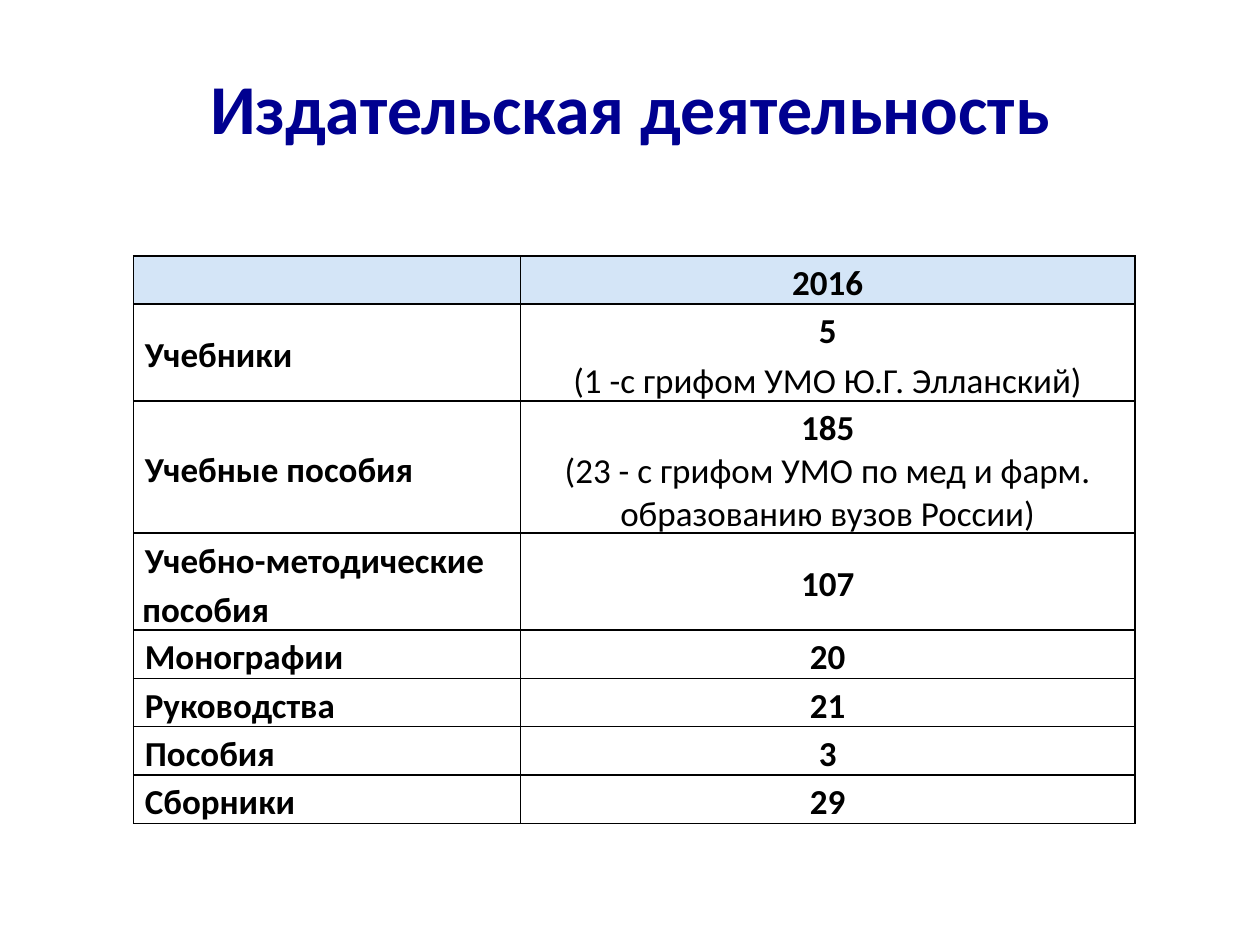
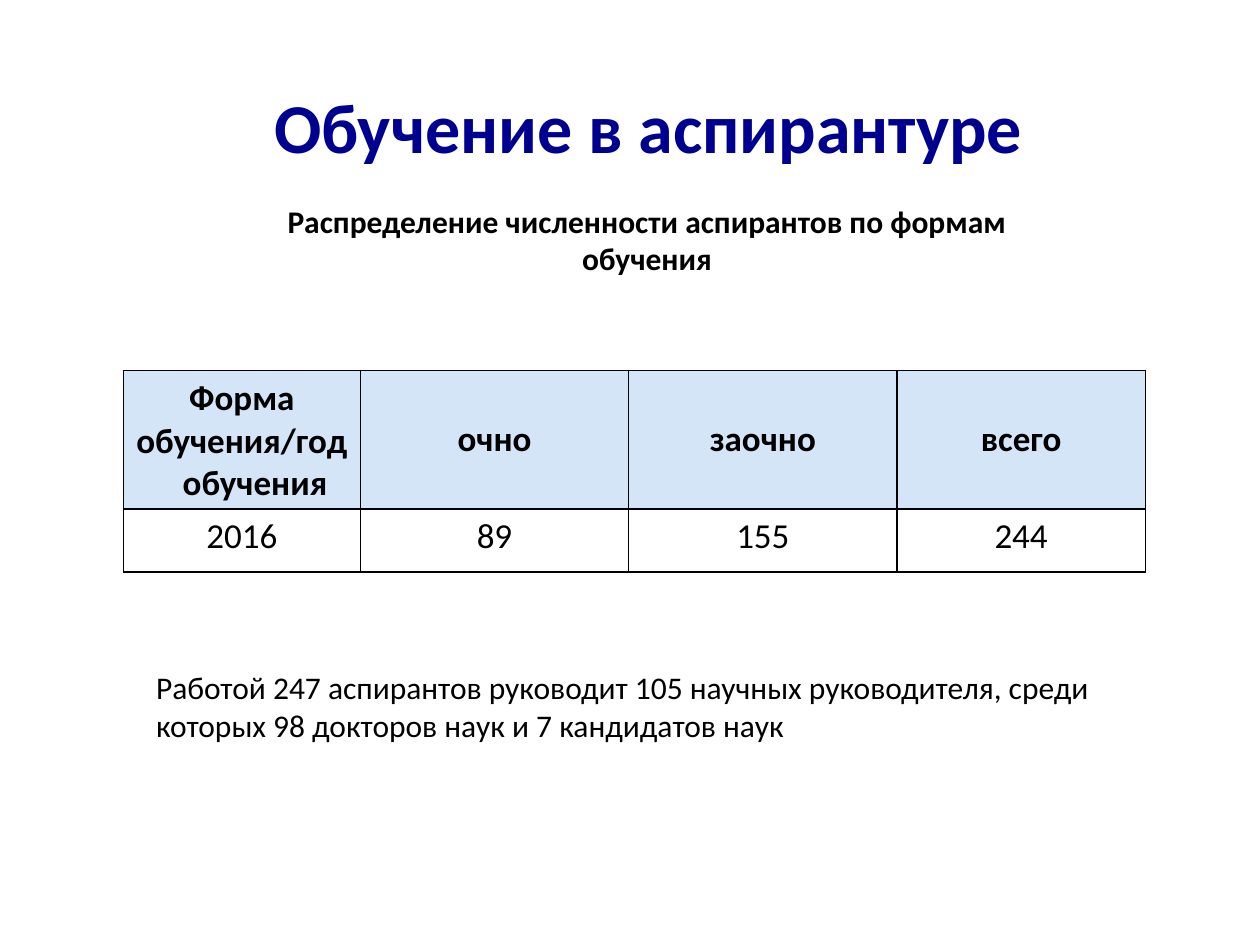
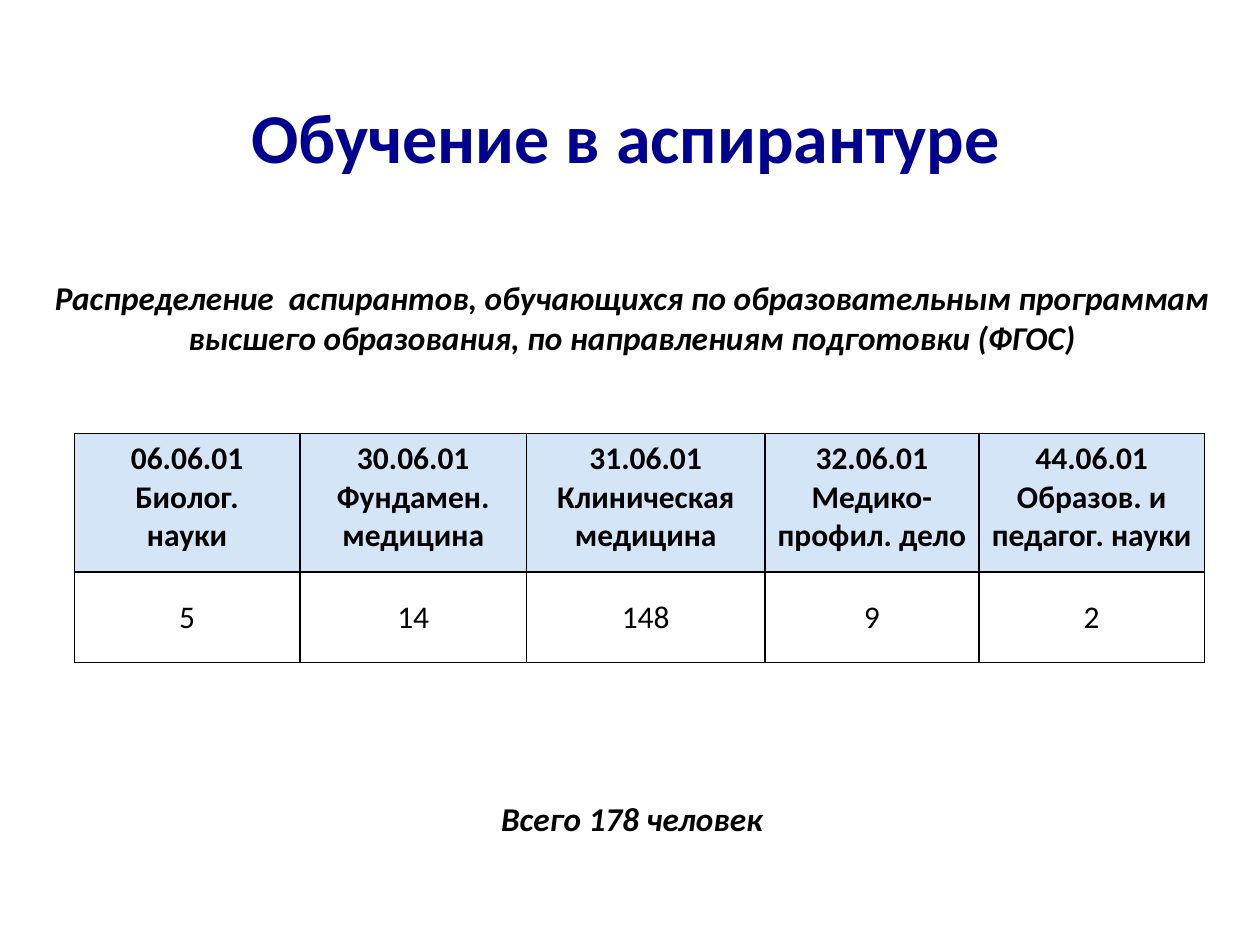
"""Build three slides on publishing and postgraduate training."""
from dataclasses import dataclass
from typing import Sequence

from lxml import etree
from pptx import Presentation, util as u
from pptx.dml.color import RGBColor
from pptx.enum import text as t
from pptx.oxml import ns

NAVY = RGBColor(0x00, 0x00, 0x90)
BLACK = RGBColor(0x00, 0x00, 0x00)
PALE_BLUE = RGBColor(0xD4, 0xE5, 0xF7)
FONT = "Calibri"
SLIDE_W, SLIDE_H = u.Inches(10), u.Inches(7.5)
GRID_COLS, GRID_ROWS = 100, 75
MIDDLE, TOP = t.MSO_ANCHOR.MIDDLE, t.MSO_ANCHOR.TOP


@dataclass(frozen=True)
class Box:
    """Place on the slide grid, in columns and rows."""
    col: float
    row: float
    cols: float
    rows: float


@dataclass(frozen=True)
class Line:
    """One paragraph; indents are in grid columns."""
    text: str
    bold: bool = True
    italic: bool = False
    centred: bool = True
    spacing: float = 1.0
    left: float = 0
    first: float = 0


@dataclass(frozen=True)
class Cell:
    """Contents of one table cell."""
    lines: Sequence[Line]
    header: bool = False
    anchor: t.MSO_ANCHOR = MIDDLE


@dataclass(frozen=True)
class Grid:
    """A table: its corner, column widths, row heights, cells and style."""
    col: float
    row: float
    widths: Sequence[float]
    heights: Sequence[float]
    cells: Sequence[Sequence[Cell]]
    size: int
    side_margin: float = 1
    end_margin: float = 0.5


def across(cols: float) -> int:
    """Turn grid columns into a length."""
    return round(SLIDE_W * cols / GRID_COLS)


def down(rows: float) -> int:
    """Turn grid rows into a length."""
    return round(SLIDE_H * rows / GRID_ROWS)


def write(frame, lines: Sequence[Line], size: float, color: RGBColor = BLACK) -> None:
    """Fill a text frame with formatted paragraphs."""
    for number, line in enumerate(lines):
        paragraph = frame.add_paragraph() if number else frame.paragraphs[0]
        paragraph.text = line.text
        paragraph.alignment = t.PP_ALIGN.CENTER if line.centred else t.PP_ALIGN.LEFT
        paragraph.line_spacing = line.spacing
        properties = paragraph._p.get_or_add_pPr()
        properties.set("marL", str(across(line.left)))
        properties.set("indent", str(across(line.first)))
        for run in paragraph.runs:
            run.font.name, run.font.size = FONT, u.Pt(size)
            run.font.bold, run.font.italic = line.bold, line.italic
            run.font.color.rgb = color


def add_text(slide, box: Box, line: Line, size: float,
             color: RGBColor = BLACK, anchor: t.MSO_ANCHOR = TOP) -> None:
    """Place one wrapped paragraph on the slide."""
    frame = slide.shapes.add_textbox(across(box.col), down(box.row),
                                     across(box.cols), down(box.rows)).text_frame
    frame.word_wrap = True
    frame.vertical_anchor = anchor
    write(frame, [line], size, color)


def add_title(slide, box: Box, title: str, left: float = 0) -> None:
    """Place the slide title."""
    add_text(slide, box, Line(title, left=left), 40, NAVY, MIDDLE)


def add_borders(cell) -> None:
    """Draw thin black borders on all sides of a cell."""
    properties = cell._tc.get_or_add_tcPr()
    for side in ("a:lnL", "a:lnR", "a:lnT", "a:lnB"):
        border = etree.SubElement(properties, ns.qn(side), w=str(u.Pt(1)))
        fill = etree.SubElement(border, ns.qn("a:solidFill"))
        etree.SubElement(fill, ns.qn("a:srgbClr"), val=str(BLACK))


def add_grid(slide, grid: Grid) -> None:
    """Draw a bordered table."""
    table = slide.shapes.add_table(
        len(grid.heights), len(grid.widths), across(grid.col), down(grid.row),
        across(sum(grid.widths)), down(sum(grid.heights))).table
    table.first_row = table.horz_banding = False
    for column, width in zip(table.columns, grid.widths):
        column.width = across(width)
    for row, height, contents in zip(table.rows, grid.heights, grid.cells):
        row.height = down(height)
        for cell, content in zip(row.cells, contents):
            cell.margin_left = cell.margin_right = across(grid.side_margin)
            cell.margin_top = cell.margin_bottom = down(grid.end_margin)
            cell.vertical_anchor = content.anchor
            add_borders(cell)
            if content.header:
                cell.fill.solid()
                cell.fill.fore_color.rgb = PALE_BLUE
            else:
                cell.fill.background()
            write(cell.text_frame, content.lines, grid.size)


def counts(values: Sequence[str], anchor: t.MSO_ANCHOR) -> list[Cell]:
    """Make a row of plain numbers."""
    return [Cell([Line(value, bold=False)], anchor=anchor) for value in values]


def build_publishing(slide) -> None:
    """Show the publications by kind."""
    add_title(slide, Box(5, 2.2, 90, 12.5), "Издательская деятельность")
    publications = [
        ("Учебники", "5", Line("(1 -с грифом УМО Ю.Г. Элланский)", bold=False, spacing=1.15)),
        ("Учебные пособия", "185",
         Line("(23 - с грифом УМО по мед и фарм. образованию вузов России)", bold=False)),
        ("Учебно-методические пособия", "107", None),
        ("Монографии", "20", None),
        ("Руководства", "21", None),
        ("Пособия", "3", None),
        ("Сборники", "29", None),
    ]
    rows = [[Cell([Line("", spacing=1.15)], True, TOP),
             Cell([Line("2016", spacing=1.15)], True, TOP)]]
    for kind, total, remark in publications:
        figures = [Line(total, spacing=1.15)] + ([remark] if remark else [])
        rows.append([Cell([Line(kind, centred=False, spacing=1.15, first=0.2)]),
                     Cell(figures)])
    heights = [3.8, 7.6, 8.7, 7.4] + [3.8] * 4
    add_grid(slide, Grid(10.6, 20.3, [30.7, 48.8], heights, rows, 20, 0.7, 0))


def build_study_forms(slide) -> None:
    """Show postgraduates by form of study."""
    add_title(slide, Box(1.6, 3.7, 96.1, 12.5), "Обучение в аспирантуре", 3.6)
    add_text(slide, Box(18.5, 15.5, 65.7, 7.1),
             Line("Распределение численности аспирантов по формам обучения"), 18)
    corner = Cell([Line("Форма обучения/год"),
                   Line("обучения", centred=False, left=3.7)], True)
    header = [corner] + [Cell([Line(form)], True) for form in ("очно", "заочно", "всего")]
    add_grid(slide, Grid(9.8, 29.4, [18.8, 21.3, 21.3, 19.7], [8.9, 5],
                         [header, counts(["2016", "89", "155", "244"], TOP)], 20))
    add_text(slide, Box(11.4, 52.5, 78.7, 10.1),
             Line("Работой 247 аспирантов руководит 105 научных руководителя, среди "
                  "которых 98 докторов наук и 7 кандидатов наук",
                  bold=False, centred=False), 18)


def build_fields(slide) -> None:
    """Show postgraduates by field of training."""
    add_title(slide, Box(1.6, 4.5, 96.1, 12.5), "Обучение в аспирантуре")
    add_text(slide, Box(2.1, 21.5, 96.1, 7.5),
             Line("Распределение  аспирантов, обучающихся по образовательным программам "
                  "высшего образования, по направлениям подготовки (ФГОС)", italic=True), 19)
    fields = [
        ("06.06.01", "Биолог.", "науки"),
        ("30.06.01", "Фундамен.", "медицина"),
        ("31.06.01", "Клиническая медицина"),
        ("32.06.01", "Медико-профил. дело"),
        ("44.06.01", "Образов. и педагог. науки"),
    ]
    header = [Cell([Line(part) for part in field], True, TOP) for field in fields]
    add_grid(slide, Grid(5.9, 34.4, [17.9, 18, 18.9, 17, 17.9], [11, 7.2],
                         [header, counts(["5", "14", "148", "9", "2"], MIDDLE)], 18))
    add_text(slide, Box(2.1, 62.9, 96.1, 4.2), Line("Всего 178 человек", italic=True), 19)


def main() -> None:
    """Build and save the presentation."""
    deck = Presentation()
    deck.slide_width, deck.slide_height = SLIDE_W, SLIDE_H
    for build in (build_publishing, build_study_forms, build_fields):
        build(deck.slides.add_slide(deck.slide_layouts[6]))
    deck.save("out.pptx")


if __name__ == "__main__":
    main()
